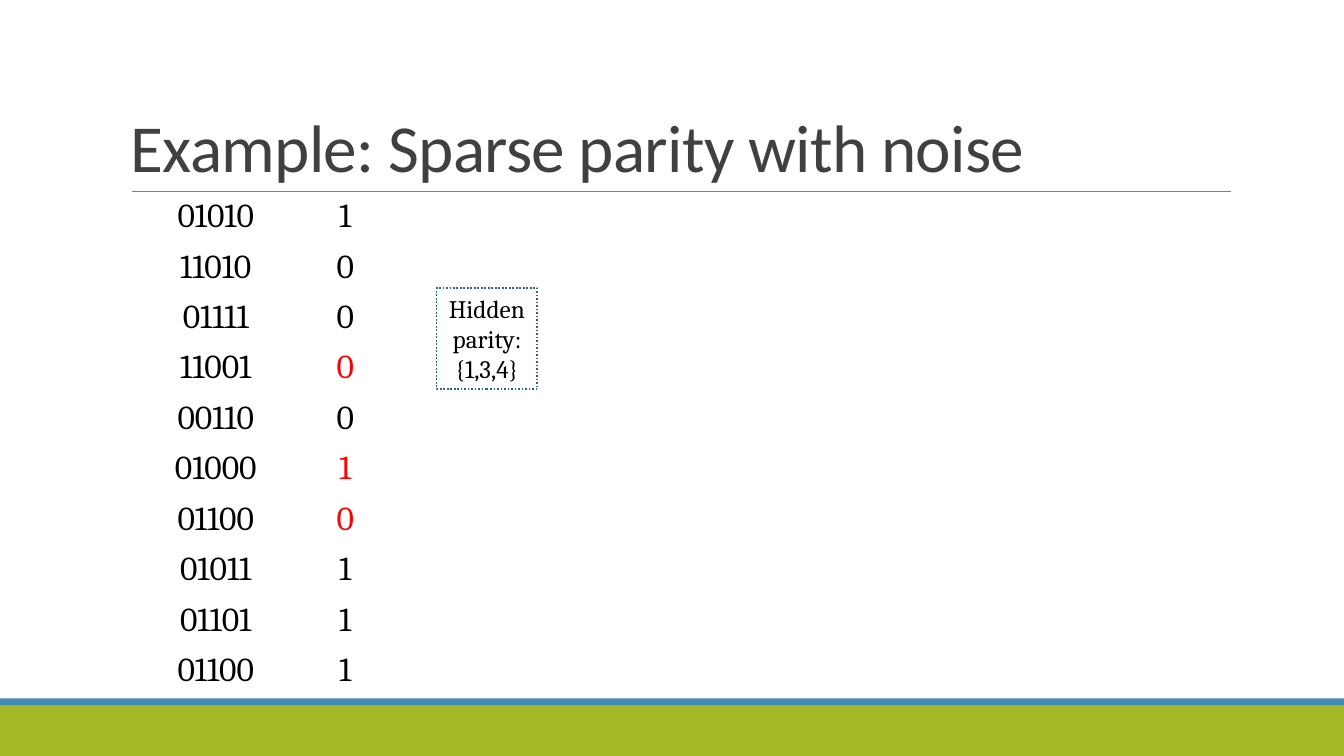
from lxml import etree
from pptx import Presentation
from pptx.dml.color import RGBColor
from pptx.enum.dml import MSO_LINE
from pptx.enum.shapes import MSO_CONNECTOR, MSO_SHAPE
from pptx.enum.text import MSO_ANCHOR as Anchor, PP_ALIGN as Align
from pptx.oxml.ns import qn
from pptx.util import Inches, Pt

# Content
TITLE = "Example: Sparse parity with noise"
HIDDEN_PARITY = "Hidden parity: {1,3,4}"
SAMPLES = [  # input bits, label, label is noisy
    ("01010", "1", False),
    ("11010", "0", False),
    ("01111", "0", False),
    ("11001", "0", True),
    ("00110", "0", False),
    ("01000", "1", True),
    ("01100", "0", True),
    ("01011", "1", False),
    ("01101", "1", False),
    ("01100", "1", False),
]
COLORS = {
    "green": "A6B727", "blue": "418AB3", "rule": "808080", "title": "404040",
    "text": "000000", "noise": "FF0000", "box": "306684",
}
BANDS = [("green", 7, 0.5), ("blue", 6.93, 0.07)]  # colour, top, height
COLUMN_WIDTHS = (1.88, 0.69)
ROW_HEIGHT = 0.41
NO_STYLE_NO_GRID = "{2D5ABB26-0587-4C30-8999-92F81FD0307C}"


def color(name):
    return RGBColor.from_string(COLORS[name])


def add_run(paragraph, text, size, font_name, color_name):
    run = paragraph.add_run()
    run.text = text
    run.font.size = Pt(size)
    run.font.name = font_name
    run.font.color.rgb = color(color_name)
    return run


def add_rectangle(slide, left, top, width, height):
    shape = slide.shapes.add_shape(
        MSO_SHAPE.RECTANGLE, Inches(left), Inches(top), Inches(width), Inches(height))
    shape.shadow.inherit = False
    return shape


def add_background(slide):
    for name, top, height in BANDS:
        band = add_rectangle(slide, 0, top, 13.33, height)
        band.fill.solid()
        band.fill.fore_color.rgb = color(name)
        band.line.fill.background()
    rule = slide.shapes.add_connector(
        MSO_CONNECTOR.STRAIGHT, Inches(1.31), Inches(1.9), Inches(12.21), Inches(1.9))
    rule.line.color.rgb = color("rule")
    rule.line.width = Pt(0.5)
    etree.SubElement(rule._element.spPr, qn("a:effectLst"))


def add_title(slide):
    box = slide.shapes.add_textbox(Inches(1.2), Inches(0.31), Inches(11), Inches(1.59))
    frame = box.text_frame
    frame.word_wrap = True
    frame.vertical_anchor = Anchor.BOTTOM
    paragraph = frame.paragraphs[0]
    paragraph.line_spacing = 0.85
    run = add_run(paragraph, TITLE, 48, "Calibri", "title")
    run.font._element.set("spc", "-50")


def add_samples(slide):
    table = slide.shapes.add_table(
        len(SAMPLES), len(COLUMN_WIDTHS), Inches(1.2), Inches(1.9),
        Inches(sum(COLUMN_WIDTHS)), Inches(ROW_HEIGHT * len(SAMPLES))).table
    table.first_row = table.horz_banding = False
    table._tbl.tblPr.find(qn("a:tableStyleId")).text = NO_STYLE_NO_GRID
    for column, width in zip(table.columns, COLUMN_WIDTHS):
        column.width = Inches(width)
    for row, (bits, label, noisy) in zip(table.rows, SAMPLES):
        row.height = Inches(ROW_HEIGHT)
        values = [(bits, "text"), (label, "noise" if noisy else "text")]
        for cell, (text, color_name) in zip(row.cells, values):
            cell.fill.background()
            cell.vertical_anchor = Anchor.MIDDLE
            paragraph = cell.text_frame.paragraphs[0]
            paragraph.alignment = Align.CENTER
            add_run(paragraph, text, 24, "Cambria", color_name)


def add_hidden_parity(slide):
    box = add_rectangle(slide, 4.33, 2.86, 1, 1)
    box.fill.background()
    box.line.color.rgb = color("box")
    box.line.width = Pt(1.25)
    box.line.dash_style = MSO_LINE.ROUND_DOT
    frame = box.text_frame
    frame.word_wrap = True
    frame.vertical_anchor = Anchor.MIDDLE
    paragraph = frame.paragraphs[0]
    paragraph.alignment = Align.CENTER
    add_run(paragraph, HIDDEN_PARITY, 18, "Cambria", "text")


def main():
    presentation = Presentation()
    presentation.slide_width = Inches(13.33)
    presentation.slide_height = Inches(7.5)
    slide = presentation.slides.add_slide(presentation.slide_layouts[6])
    add_background(slide)
    add_title(slide)
    add_samples(slide)
    add_hidden_parity(slide)
    presentation.save("out.pptx")


if __name__ == "__main__":
    main()
